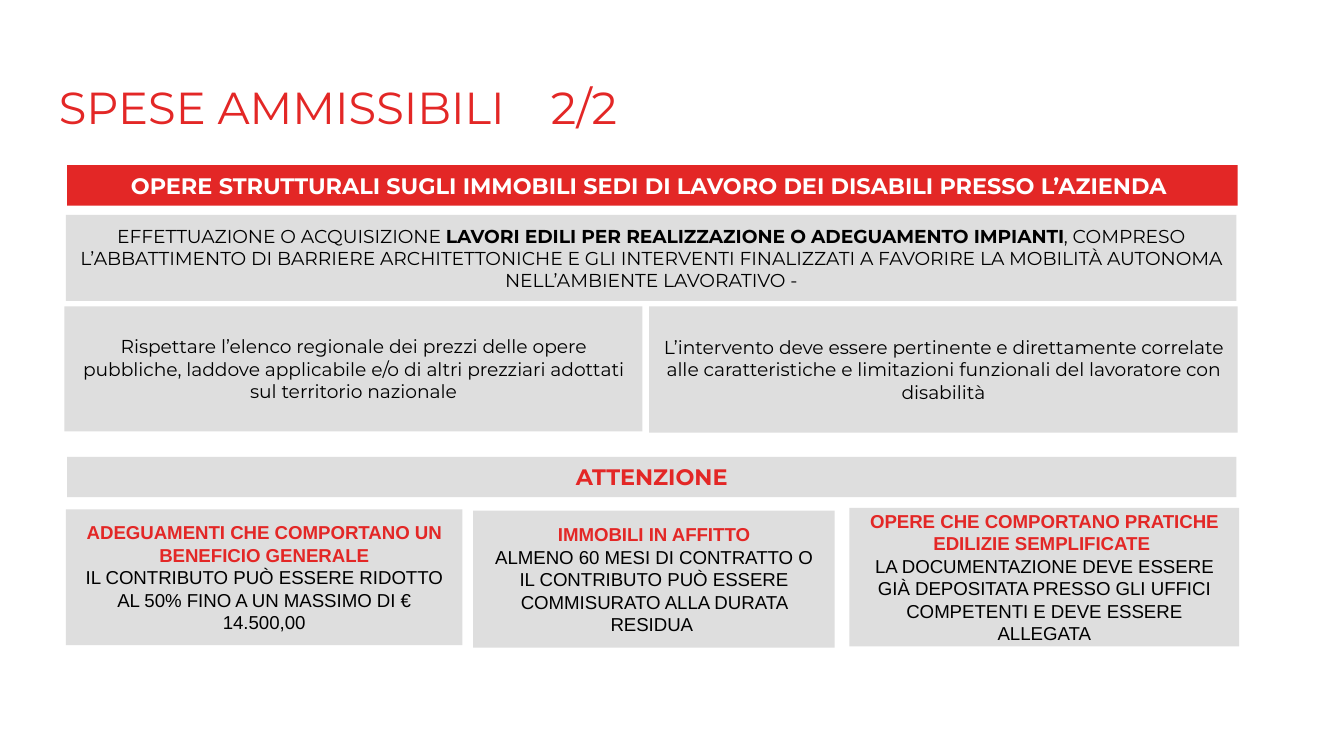
from lxml.etree import SubElement
from pptx import Presentation
from pptx.dml.color import RGBColor
from pptx.enum.shapes import MSO_SHAPE
from pptx.enum.text import MSO_ANCHOR, MSO_AUTO_SIZE, PP_ALIGN
from pptx.oxml.ns import qn
from pptx.util import Inches, Pt

RED = RGBColor(0xE3, 0x27, 0x26)
GREY = RGBColor(0xDE, 0xDE, 0xDE)
BLACK = RGBColor(0, 0, 0)
WHITE = RGBColor(0xFF, 0xFF, 0xFF)
HEADING_FONT, CARD_FONT = "Montserrat", "Arial"

SLIDE_WIDTH = Inches(10)
SLIDE_HEIGHT = SLIDE_WIDTH * 9 // 16

TITLE = "SPESE AMMISSIBILI\t2/2"
TITLE_TAB = 3.66

# text, box (left, top, width, height), fill, text colour
BANDS = [
    ("OPERE STRUTTURALI SUGLI IMMOBILI SEDI DI LAVORO DEI DISABILI PRESSO L’AZIENDA ",
     (0.5, 1.23, 8.71, 0.3), RED, WHITE),
    ("ATTENZIONE", (0.5, 3.4, 8.7, 0.3), GREY, RED),
]

# box, runs (text, bold)
RULES = [
    ((0.49, 1.6, 8.71, 0.64), [
        ("EFFETTUAZIONE O ACQUISIZIONE ", False),
        ("LAVORI EDILI PER REALIZZAZIONE O ADEGUAMENTO IMPIANTI", True),
        (", COMPRESO L’ABBATTIMENTO DI BARRIERE ARCHITETTONICHE E GLI INTERVENTI "
         "FINALIZZATI A FAVORIRE LA MOBILITÀ AUTONOMA NELL’AMBIENTE LAVORATIVO -", False),
    ]),
    ((0.48, 2.28, 4.3, 0.93), [
        ("Rispettare l’elenco regionale dei prezzi delle opere pubbliche, laddove "
         "applicabile e/o di altri prezziari adottati sul territorio nazionale", False),
    ]),
    ((4.83, 2.28, 4.38, 0.94), [
        ("L’intervento deve essere pertinente e direttamente correlate alle "
         "caratteristiche e limitazioni funzionali del lavoratore con disabilità", False),
    ]),
]

# box, heading, detail
WARNINGS = [
    ((0.49, 3.79, 2.95, 1.01), "ADEGUAMENTI CHE COMPORTANO UN BENEFICIO GENERALE",
     "IL CONTRIBUTO PUÒ ESSERE RIDOTTO AL 50% FINO A UN MASSIMO DI € 14.500,00"),
    ((3.52, 3.8, 2.69, 1.02), "IMMOBILI IN AFFITTO",
     "ALMENO 60 MESI DI CONTRATTO O IL CONTRIBUTO PUÒ ESSERE COMMISURATO ALLA DURATA "
     "RESIDUA "),
    ((6.32, 3.78, 2.9, 1.03), "OPERE CHE COMPORTANO PRATICHE EDILIZIE SEMPLIFICATE ",
     "LA DOCUMENTAZIONE DEVE ESSERE GIÀ DEPOSITATA PRESSO GLI UFFICI COMPETENTI "
     "E DEVE ESSERE ALLEGATA"),
]


def add_run(paragraph, text, font, size, color, bold=False):
    run = paragraph.add_run()
    run.text = text
    run.font.name = font
    run.font.size = Pt(size)
    run.font.color.rgb = color
    run.font.bold = bold


def add_panel(slide, box, fill, paragraphs, font, size, anchor=MSO_ANCHOR.MIDDLE):
    """Add a filled box; each paragraph is a list of (text, bold, colour) runs."""
    panel = slide.shapes.add_shape(MSO_SHAPE.RECTANGLE, *map(Inches, box))
    panel.shadow.inherit = False
    panel.fill.solid()
    panel.fill.fore_color.rgb = fill
    panel.line.fill.background()
    frame = panel.text_frame
    frame.word_wrap = True
    frame.vertical_anchor = anchor
    for index, runs in enumerate(paragraphs):
        paragraph = frame.add_paragraph() if index else frame.paragraphs[0]
        paragraph.alignment = PP_ALIGN.CENTER
        for text, bold, color in runs:
            add_run(paragraph, text, font, size, color, bold)
    return panel


def add_title(slide):
    title = slide.shapes.add_textbox(Inches(0.34), Inches(0.49), Inches(9.32), Inches(0.63))
    frame = title.text_frame
    frame.word_wrap = True
    frame.margin_top = frame.margin_bottom = Inches(0.1)
    paragraph = frame.paragraphs[0]
    tabs = SubElement(paragraph._p.get_or_add_pPr(), qn("a:tabLst"))
    SubElement(tabs, qn("a:tab"), pos=str(Inches(TITLE_TAB)), algn="l")
    add_run(paragraph, TITLE, HEADING_FONT, 24, RED)


def main():
    deck = Presentation()
    deck.slide_width, deck.slide_height = SLIDE_WIDTH, SLIDE_HEIGHT
    slide = deck.slides.add_slide(deck.slide_layouts[6])

    add_title(slide)
    for text, box, fill, color in BANDS:
        band = add_panel(slide, box, fill, [[(text, True, color)]],
                         HEADING_FONT, 12, MSO_ANCHOR.TOP)
        band.text_frame.auto_size = MSO_AUTO_SIZE.SHAPE_TO_FIT_TEXT
    for box, runs in RULES:
        add_panel(slide, box, GREY, [[(text, bold, BLACK) for text, bold in runs]],
                  HEADING_FONT, 10)
    for box, heading, detail in WARNINGS:
        add_panel(slide, box, GREY, [[(heading, True, RED)], [(detail, False, BLACK)]],
                  CARD_FONT, 10)

    deck.save("out.pptx")


if __name__ == "__main__":
    main()
